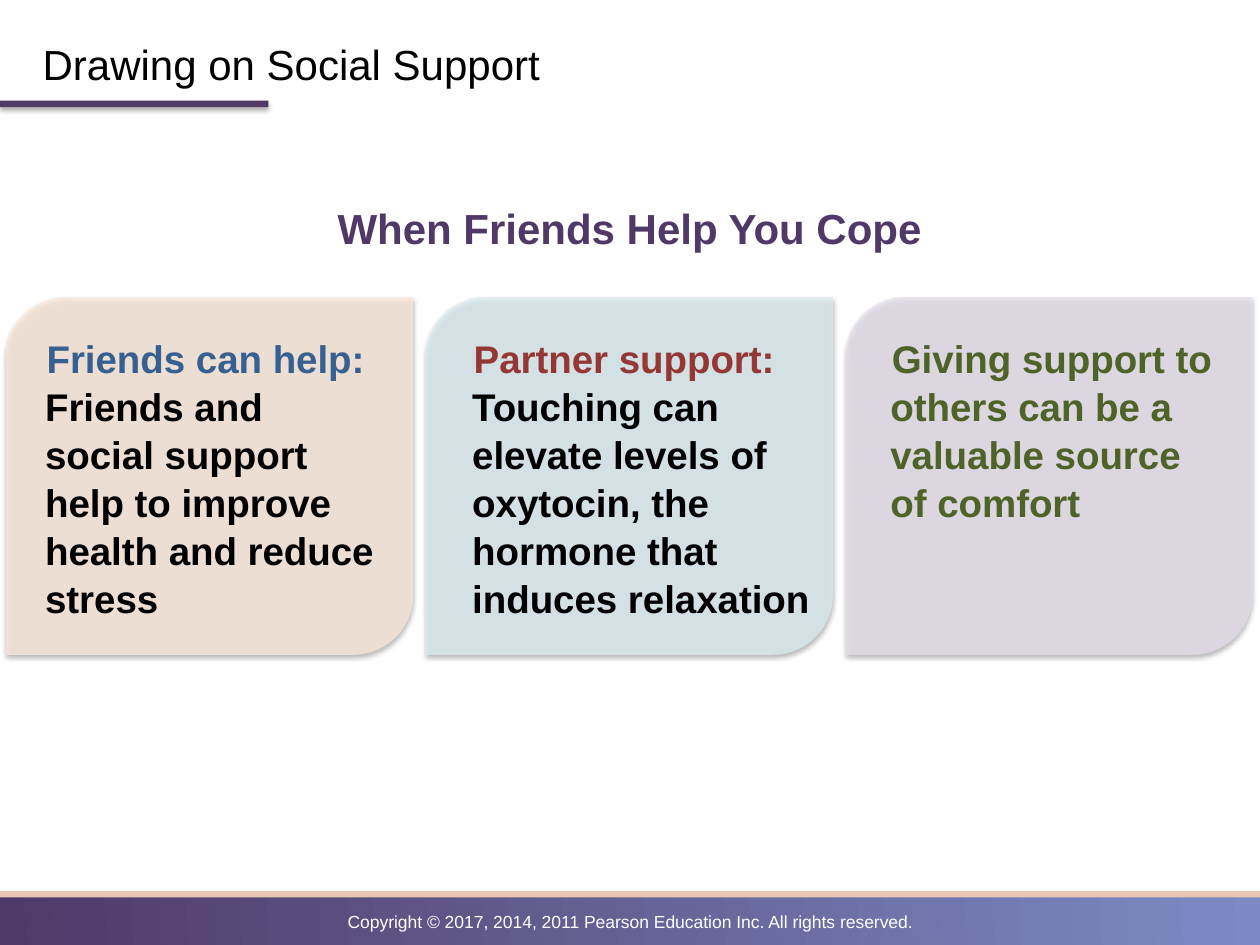
from dataclasses import dataclass
from typing import Any

from lxml.etree import SubElement as Sub
from pptx import Presentation
from pptx.dml.color import RGBColor as Rgb
from pptx.enum.shapes import MSO_SHAPE as Form
from pptx.enum.text import MSO_ANCHOR as Anchor, PP_ALIGN as Align
from pptx.oxml.ns import qn
from pptx.util import Cm, Pt

WIDE, HIGH = 25.4, 19.05
PLUM, SAND, WHITE, BLACK = "4F3967", "E7C8B3", "FFFFFF", "000000"
STEP = 8.46


@dataclass
class Box:
    left: float
    top: float
    width: float
    height: float

    def cm(self) -> tuple:
        return tuple(Cm(v) for v in (self.left, self.top, self.width, self.height))


@dataclass
class Run:
    text: str
    color: str


@dataclass
class Card:
    fill: str
    left: float
    width: float
    indent: float
    runs: list[Run]


def paint(color: Any, code: str) -> None:
    color.rgb = Rgb.from_string(code)


def shade(shape: Any) -> None:
    glow = Sub(shape._element.spPr.find(qn("a:effectLst")), qn("a:outerShdw"),
               blurRad=str(Pt(3.1)), dist=str(Pt(1.8)), dir="5400000", rotWithShape="0")
    tone = Sub(glow, qn("a:srgbClr"), val=BLACK)
    Sub(tone, qn("a:alpha"), val="35000")


def draw_shape(slide: Any, box: Box, fill: str, form: Any = Form.RECTANGLE,
               shadow: bool = False) -> Any:
    shape = slide.shapes.add_shape(form, *box.cm())
    shape.shadow.inherit = False
    shape.line.fill.background()
    shape.fill.solid()
    paint(shape.fill.fore_color, fill)
    if shadow:
        shade(shape)
    return shape


def draw_text(slide: Any, box: Box, runs: list[Run], size: float, bold: bool = False,
              frame: dict | None = None, para: dict | None = None) -> Any:
    area = slide.shapes.add_textbox(*box.cm()).text_frame
    for key, val in {"word_wrap": True, **(frame or {})}.items():
        setattr(area, key, val)
    line = area.paragraphs[0]
    for key, val in (para or {}).items():
        setattr(line, key, val)
    for item in runs:
        run = line.add_run()
        run.text = item.text
        for key, val in {"name": "Arial", "size": Pt(size), "bold": bold}.items():
            setattr(run.font, key, val)
        paint(run.font.color, item.color)
    return line


def draw_card(slide: Any, spot: int, card: Card) -> None:
    box = Box(0.13 + spot * STEP, 5.99, 8.2, 7.21)
    shape = draw_shape(slide, box, card.fill, Form.ROUND_2_DIAG_RECTANGLE, True)
    tone = shape._element.spPr.find(qn("a:solidFill"))[0]
    Sub(tone, qn("a:alpha"), val="75000")
    line = draw_text(slide, Box(card.left, 6.6, card.width, 6), card.runs, 22, True,
                     para={"line_spacing": 1.04})
    for key, val in {"marL": card.indent, "indent": 0.03}.items():
        line._p.get_or_add_pPr().set(key, str(Cm(val)))


def draw_foot(slide: Any) -> None:
    band = draw_shape(slide, Box(0, 17.98, WIDE, HIGH - 17.98), PLUM)
    band.fill.gradient()
    band.fill.gradient_angle = 4
    for stop, code in zip(band.fill.gradient_stops, (PLUM, "7C8BC4")):
        paint(stop.color, code)
    draw_shape(slide, Box(0, 17.96, WIDE, 0.13), SAND)
    note = "Copyright © 2017, 2014, 2011 Pearson Education Inc. All rights reserved."
    draw_text(slide, Box(0, 18.24, WIDE, 0.69), [Run(note, WHITE)], 10,
              para={"alignment": Align.CENTER})


CARDS = [
    Card("FDEADA", 0.66, 7.26, 0, [
        Run("Friends can help: ", "376092"),
        Run("Friends and social support help to improve health and reduce stress", BLACK)]),
    Card("DBEEF4", 8.97, 8.18, 0.3, [
        Run("Partner support: ", "953735"),
        Run("Touching can elevate levels of oxytocin, the hormone that induces relaxation",
            BLACK)]),
    Card("E6E0EC", 17.7, 7.06, 0, [
        Run("Giving support to others can be a valuable source of comfort", "4F6228")]),
]


def main() -> None:
    deck = Presentation()
    deck.slide_width, deck.slide_height = Cm(WIDE), Cm(HIGH)
    slide = deck.slides.add_slide(deck.slide_layouts[6])
    draw_foot(slide)
    draw_shape(slide, Box(0, 2.03, 5.41, 0.13), PLUM, shadow=True)
    draw_text(slide, Box(0.61, 0.53, 21.59, 1.5), [Run("Drawing on Social Support", BLACK)],
              24, frame={"vertical_anchor": Anchor.MIDDLE})
    draw_text(slide, Box(6.22, 3.96, 12.95, 1.27), [Run("When Friends Help You Cope", PLUM)],
              24, True, para={"alignment": Align.CENTER})
    for spot, card in enumerate(CARDS):
        draw_card(slide, spot, card)
    deck.save("out.pptx")


if __name__ == "__main__":
    main()
